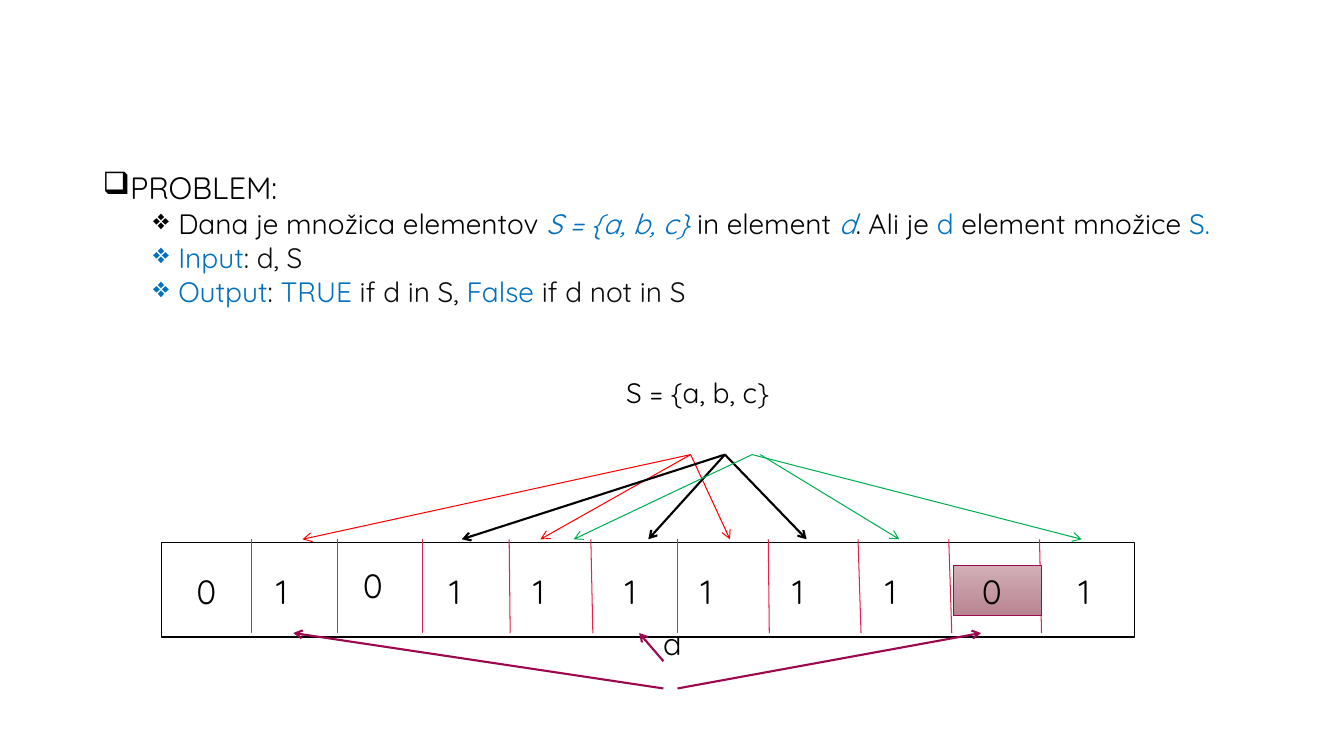
from dataclasses import dataclass

from lxml.etree import SubElement
from pptx import Presentation
from pptx.dml.color import RGBColor
from pptx.enum.shapes import MSO_CONNECTOR, MSO_SHAPE
from pptx.enum.text import PP_ALIGN
from pptx.oxml.ns import qn
from pptx.util import Inches, Pt


@dataclass(frozen=True)
class Theme:
    font: str = "Quicksand"
    black: str = "000000"
    white: str = "FFFFFF"
    dark: str = "0D0D0D"
    blue: str = "0070C0"
    red: str = "FF0000"
    green: str = "00B050"
    divider: str = "E5224E"
    plum: str = "9D074E"
    light_rose: str = "D1AEB6"
    deep_rose: str = "B98491"
    heading: int = 22
    body: int = 20
    digit: int = 24


THEME = Theme()

# Array: divider positions (top x, bottom x) and bits (value, left, top)
ARRAY_TOP, ARRAY_BOTTOM = 5.35, 6.28
DIVIDERS = [(2.49, 2.49), (3.35, 3.35), (4.19, 4.19), (5.05, 5.06), (5.86, 5.88),
            (6.72, 6.72), (7.62, 7.63), (8.51, 8.54), (9.41, 9.44), (10.31, 10.33)]
BITS = [("0", 1.85, 5.61), ("1", 2.64, 5.61), ("0", 3.5, 5.56), ("1", 4.36, 5.61),
        ("1", 5.19, 5.61), ("1", 6.1, 5.61), ("1", 6.85, 5.61), ("1", 7.76, 5.61),
        ("1", 8.68, 5.61), ("1", 10.6, 5.61)]

# Hash arrows of each element: colour, width, (start x, target x)
HASH_TOP = 4.51
HASHES = [
    (THEME.red, 0.75, [(6.85, 3), (6.85, 5.36), (6.85, 7.24)]),
    (THEME.black, 1.5, [(7.19, 4.58), (7.19, 8), (7.19, 6.43)]),
    (THEME.green, 0.75, [(7.54, 8.92), (7.46, 10.73), (7.46, 5.69)]),
]
QUERY_ARROWS = [((6.58, 6.83), 2.91), ((6.58, 6.56), 6.34), ((6.72, 6.83), 9.73)]

# Problem statement: runs are (text, colour, italic)
STATEMENT = [
    [("Dana je množica elementov ", THEME.black, False),
     ("S = {a, b, c} ", THEME.blue, True),
     ("in element ", THEME.black, False),
     ("d", THEME.blue, True),
     (". Ali je ", THEME.black, False),
     ("d", THEME.blue, False),
     (" element množice ", THEME.black, False),
     ("S.", THEME.blue, False)],
    [("Input", THEME.blue, False), (": d, S", THEME.dark, False)],
    [("Output", THEME.blue, False), (": ", THEME.dark, False),
     ("TRUE", THEME.blue, False), (" if d in S, ", THEME.dark, False),
     ("False", THEME.blue, False), (" if d not in S", THEME.dark, False)],
]


def color(code):
    return RGBColor.from_string(code)


def style(paragraph, size, code=None):
    paragraph.font.name = THEME.font
    paragraph.font.size = Pt(size)
    if code:
        paragraph.font.color.rgb = color(code)


def add_bullet(paragraph, mark, code, margin):
    properties = paragraph._p.get_or_add_pPr()
    properties.set("marL", str(Inches(margin)))
    properties.set("indent", str(Inches(-0.25)))
    bullet_color = SubElement(properties, qn("a:buClr"))
    SubElement(bullet_color, qn("a:srgbClr")).set("val", code)
    SubElement(properties, qn("a:buChar")).set("char", mark)


def add_text_box(slide, left, top, width, height):
    box = slide.shapes.add_textbox(Inches(left), Inches(top), Inches(width), Inches(height))
    box.text_frame.word_wrap = True
    return box.text_frame


def add_label(slide, text, at, size, align=PP_ALIGN.LEFT, line_spacing=None):
    paragraph = add_text_box(slide, *at).paragraphs[0]
    paragraph.text = text
    paragraph.alignment = align
    paragraph.line_spacing = line_spacing
    style(paragraph, size, THEME.black)


def add_line(slide, start, end, code, width, arrow=False):
    line = slide.shapes.add_connector(
        MSO_CONNECTOR.STRAIGHT, *(Inches(value) for value in (*start, *end)))
    line.line.color.rgb = color(code)
    line.line.width = Pt(width)
    if arrow:
        SubElement(line.line._get_or_add_ln(), qn("a:tailEnd")).set("type", "arrow")
    SubElement(line._element.spPr, qn("a:effectLst"))


def add_rectangle(slide, left, top, width, height, line_code, line_width):
    box = slide.shapes.add_shape(
        MSO_SHAPE.RECTANGLE, Inches(left), Inches(top), Inches(width), Inches(height))
    box.shadow.inherit = False
    box.line.color.rgb = color(line_code)
    box.line.width = Pt(line_width)
    return box


def add_statement(slide):
    frame = add_text_box(slide, 0.92, 1.7, 11.5, 1.6)
    heading = frame.paragraphs[0]
    heading.text = "PROBLEM:"
    heading.line_spacing = 0.8
    add_bullet(heading, "❑", THEME.black, 0.25)
    style(heading, THEME.heading, THEME.black)
    for runs in STATEMENT:
        paragraph = frame.add_paragraph()
        paragraph.level = 1
        paragraph.line_spacing = 0.8
        paragraph.space_before = Pt(5)
        add_bullet(paragraph, "❖", runs[0][1], 0.75)
        style(paragraph, THEME.body)
        for text, code, italic in runs:
            span = paragraph.add_run()
            span.text = text
            span.font.color.rgb = color(code)
            span.font.italic = italic


def add_highlighted_bit(slide):
    box = add_rectangle(slide, 9.46, 5.61, 0.87, 0.5, THEME.plum, 0.75)
    box.fill.gradient()
    box.fill.gradient_angle = 270
    for stop, code in zip(box.fill.gradient_stops, (THEME.light_rose, THEME.deep_rose)):
        stop.color.rgb = color(code)
    box.text_frame.margin_left = Inches(0.28)
    paragraph = box.text_frame.paragraphs[0]
    paragraph.text = "0"
    paragraph.alignment = PP_ALIGN.LEFT
    style(paragraph, THEME.digit, THEME.black)


def main():
    deck = Presentation()
    deck.slide_width, deck.slide_height = Inches(13.33), Inches(7.5)
    slide = deck.slides.add_slide(deck.slide_layouts[6])

    # Statement and the labels of the set and the queried element
    add_statement(slide)
    add_label(slide, "S = {a, b, c}", (5.67, 3.74, 2.5, 0.4), THEME.body, PP_ALIGN.CENTER, 0.8)
    add_label(slide, "d", (6.42, 6.22, 0.5, 0.4), THEME.heading, PP_ALIGN.CENTER, 0.8)

    # Bit array with its dividers
    array = add_rectangle(slide, 1.6, 5.38, 9.65, 0.94, THEME.black, 1)
    array.fill.solid()
    array.fill.fore_color.rgb = color(THEME.white)
    for top_x, bottom_x in DIVIDERS:
        add_line(slide, (top_x, ARRAY_TOP), (bottom_x, ARRAY_BOTTOM), THEME.divider, 0.75)

    # Hash arrows from the set
    for code, width, arrows in HASHES:
        for start_x, target_x in arrows:
            add_line(slide, (start_x, HASH_TOP), (target_x, ARRAY_TOP), code, width, arrow=True)

    # Bits and the arrows from the queried element
    for value, left, top in BITS:
        add_label(slide, value, (left, top, 0.5, 0.5), THEME.digit)
    for start, target_x in QUERY_ARROWS:
        add_line(slide, start, (target_x, ARRAY_BOTTOM), THEME.plum, 1.5, arrow=True)
    add_highlighted_bit(slide)

    deck.save("out.pptx")


if __name__ == "__main__":
    main()
